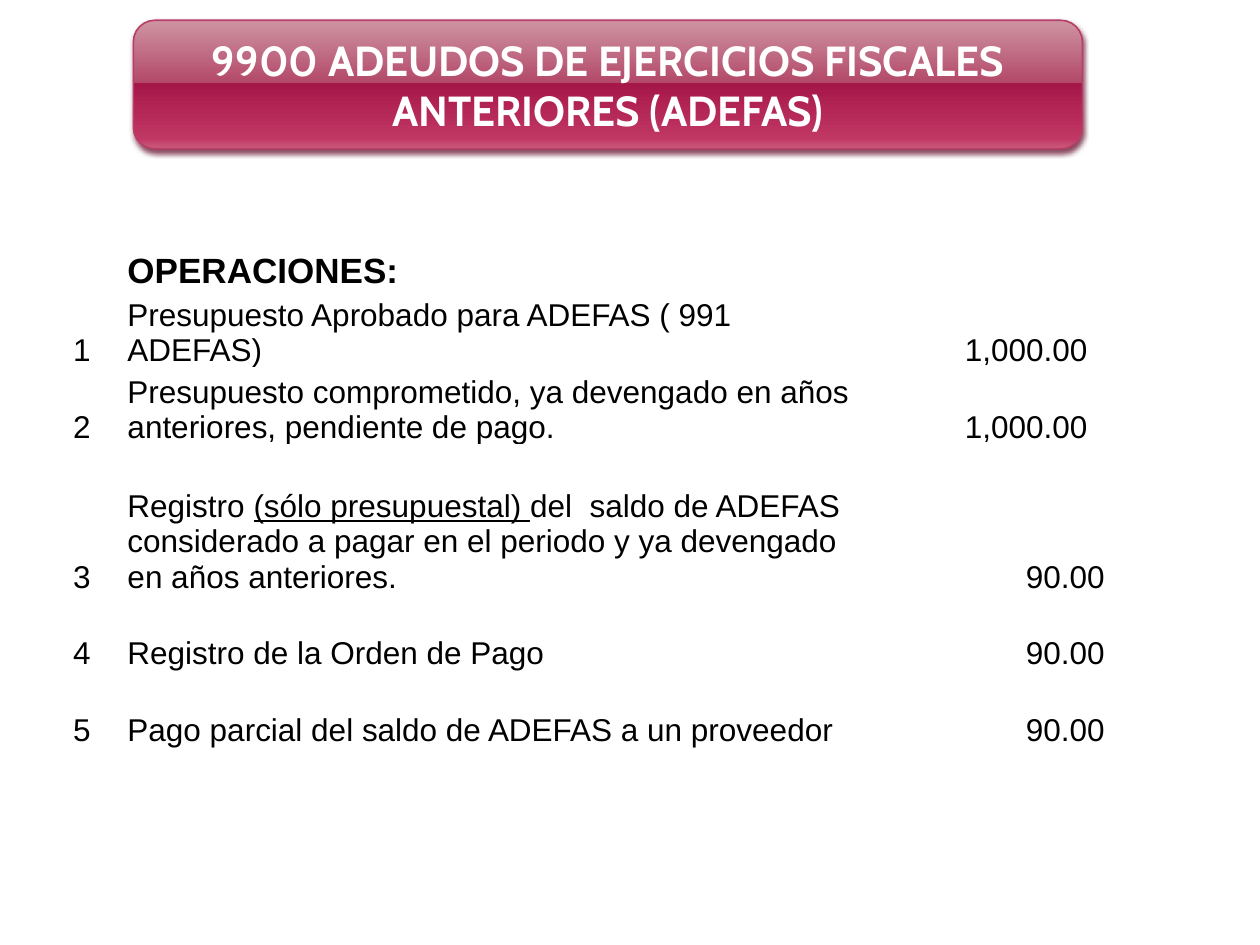
import pptx
import pptx.dml.color
import pptx.enum.shapes
import pptx.enum.text
import pptx.oxml
import pptx.oxml.ns
import pptx.util
from pptx.util import Cm, Pt

COLORS = {"text": "000000", "title": "FFFFFF", "border": "B83D68", "shadow": "722640"}
BANNER_STOPS = [(0, "CE94A2"), (49, "B34869"), (49, "A61749"), (92, "C13764"), (100, "CA5D7C")]
BANNER_BOX = (Cm(2.69), Cm(0.41), Cm(19.13), Cm(2.59))
TITLE = "9900 ADEUDOS DE EJERCICIOS FISCALES ANTERIORES (ADEFAS)"

COLUMN_WIDTHS = [1.78, 14.96, 4.8]
ROW_HEIGHT, TALL_ROW_HEIGHT = 1.55, 3.02
TALL_ROW = 3
INSET, WIDE_INSET = 0.03, 0.38
# Each operation: description runs as (text, underlined), amount, right inset
OPERATIONS = [
    ([("Presupuesto Aprobado para ADEFAS ( 991 ADEFAS)", False)], "1,000.00", WIDE_INSET),
    ([("Presupuesto comprometido, ya devengado en años anteriores, pendiente de pago.", False)],
     "1,000.00", WIDE_INSET),
    ([("Registro ", False), ("(sólo presupuestal) ", True),
      ("del  saldo de ADEFAS considerado a pagar en el periodo y ya devengado en años anteriores.",
       False)], "90.00", INSET),
    ([("Registro de la Orden de Pago", False)], "90.00", INSET),
    ([("Pago parcial del saldo de ADEFAS a un proveedor", False)], "90.00", INSET),
]
ALIGN = pptx.enum.text.PP_ALIGN


def rgb(name):
    return pptx.dml.color.RGBColor.from_string(COLORS[name])


def format_font(font, name, size, color, bold=False):
    font.name, font.size, font.bold = name, Pt(size), bold
    font.color.rgb = rgb(color)


def add_banner(slide):
    """Glossy rounded bar with a vertical gradient and a soft shadow."""
    banner = slide.shapes.add_shape(
        pptx.enum.shapes.MSO_SHAPE.ROUNDED_RECTANGLE, *BANNER_BOX)
    banner.line.color.rgb = rgb("border")
    banner.line.width = Pt(0.9)
    banner.shadow.inherit = False

    # Gradient stops
    banner.fill.gradient()
    banner.fill.gradient_angle = 270
    properties = banner.element.spPr
    namespace = pptx.oxml.ns.nsdecls("a")
    stop_list = properties.find(".//" + pptx.oxml.ns.qn("a:gsLst"))
    for stop in list(stop_list):
        stop_list.remove(stop)
    for position, color in BANNER_STOPS:
        stop_list.append(pptx.oxml.parse_xml(
            f'<a:gs {namespace} pos="{position * 1000}"><a:srgbClr val="{color}"/></a:gs>'))

    # Shadow
    properties.find(pptx.oxml.ns.qn("a:effectLst")).append(pptx.oxml.parse_xml(
        f'<a:outerShdw {namespace} blurRad="{Pt(3.1)}" dist="{Pt(2)}" dir="5400000" '
        f'rotWithShape="0"><a:srgbClr val="{COLORS["shadow"]}"><a:alpha val="83000"/>'
        '</a:srgbClr></a:outerShdw>'))


def place_title(slide):
    """Title centred over the banner and drawn in front of it."""
    title = slide.shapes.title
    title.left, title.top, title.width, title.height = BANNER_BOX
    slide.shapes._spTree.append(title.element)
    frame = title.text_frame
    frame.text = TITLE
    frame.word_wrap = True
    frame.auto_size = pptx.enum.text.MSO_AUTO_SIZE.NONE
    frame.vertical_anchor = pptx.enum.text.MSO_ANCHOR.MIDDLE
    paragraph = frame.paragraphs[0]
    paragraph.alignment = ALIGN.CENTER
    format_font(paragraph.font, "Cabin", 24, "title", bold=True)


def fill_cell(cell, runs, alignment, size=18, bold=False, right_inset=INSET):
    cell.margin_left = cell.margin_top = Cm(INSET)
    cell.margin_right, cell.margin_bottom = Cm(right_inset), 0
    cell.vertical_anchor = pptx.enum.text.MSO_ANCHOR.BOTTOM
    paragraph = cell.text_frame.paragraphs[0]
    paragraph.alignment = alignment
    format_font(paragraph.font, "Arial", size, "text", bold)
    for text, underlined in runs:
        run = paragraph.add_run()
        run.text = text
        if underlined:
            run.font.underline = True


def add_operations_table(slide):
    heights = [ROW_HEIGHT] * (len(OPERATIONS) + 1)
    heights[TALL_ROW] = TALL_ROW_HEIGHT
    table = slide.shapes.add_table(
        len(heights), len(COLUMN_WIDTHS), Cm(0.76), Cm(4.32),
        Cm(sum(COLUMN_WIDTHS)), Cm(sum(heights))).table
    table.first_row = table.horz_banding = False
    for column, width in zip(table.columns, COLUMN_WIDTHS):
        column.width = Cm(width)
    for row, height in zip(table.rows, heights):
        row.height = Cm(height)
    for cell in table.iter_cells():
        cell.fill.background()

    # Heading, then one numbered row per operation
    fill_cell(table.cell(0, 1), [("OPERACIONES:", False)], ALIGN.LEFT, size=20, bold=True)
    for number, (description, amount, right_inset) in enumerate(OPERATIONS, start=1):
        fill_cell(table.cell(number, 0), [(str(number), False)], ALIGN.CENTER)
        fill_cell(table.cell(number, 1), description, ALIGN.LEFT)
        fill_cell(table.cell(number, 2), [(amount, False)], ALIGN.RIGHT, right_inset=right_inset)


def main():
    presentation = pptx.Presentation()
    presentation.slide_width, presentation.slide_height = Cm(25.4), Cm(19.05)
    slide = presentation.slides.add_slide(presentation.slide_layouts[5])
    add_banner(slide)
    place_title(slide)
    add_operations_table(slide)
    presentation.save("out.pptx")


if __name__ == "__main__":
    main()
